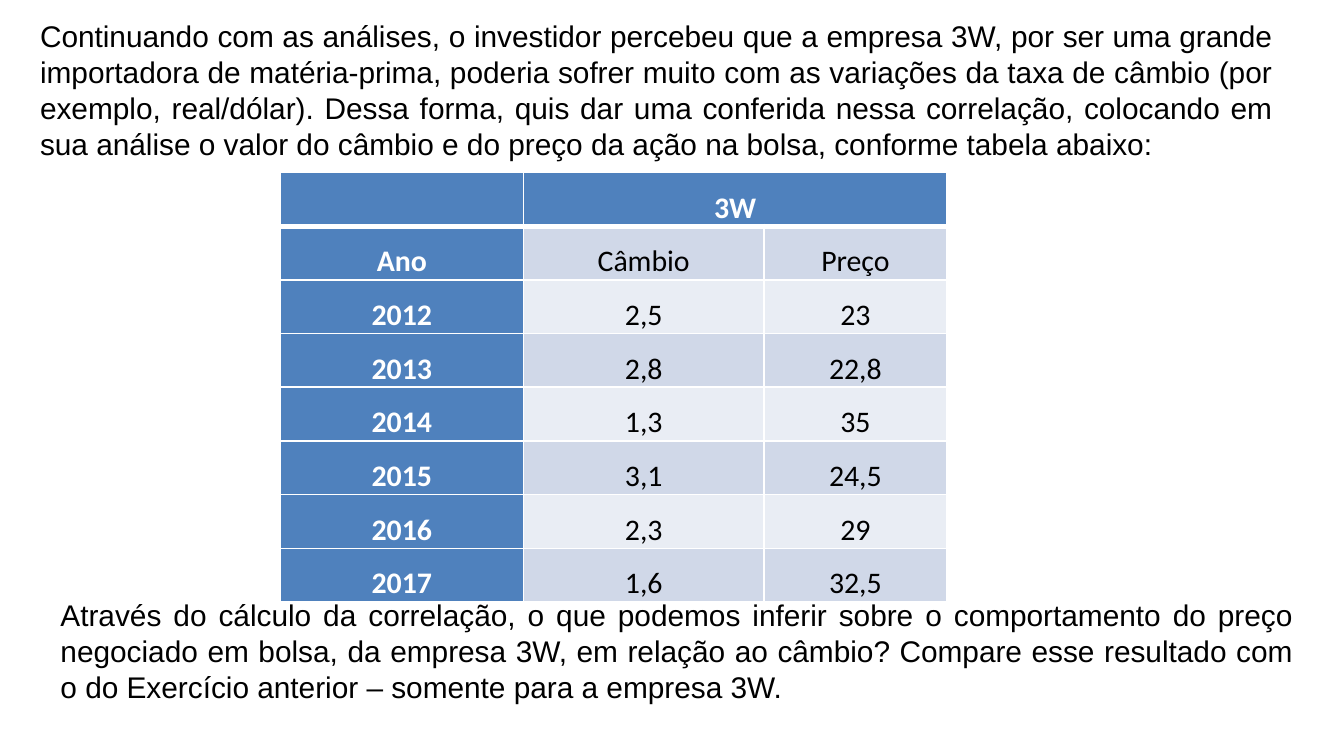
from dataclasses import dataclass
from lxml.etree import SubElement
from pptx import Presentation
from pptx.dml.color import RGBColor
from pptx.enum.text import MSO_ANCHOR, MSO_AUTO_SIZE, PP_ALIGN
from pptx.oxml.ns import qn
from pptx.slide import Slide
from pptx.util import Inches, Pt

SLIDE_WIDTH = Inches(10)
SLIDE_HEIGHT = SLIDE_WIDTH * 9 // 16

INTRODUCTION = (
    "Continuando com as análises, o investidor percebeu que a empresa 3W, por ser uma grande "
    "importadora de matéria-prima, poderia sofrer muito com as variações da taxa de câmbio "
    "(por exemplo, real/dólar). Dessa forma, quis dar uma conferida nessa correlação, colocando "
    "em sua análise o valor do câmbio e do preço da ação na bolsa, conforme tabela abaixo:"
)
QUESTION = (
    "Através do cálculo da correlação, o que podemos inferir sobre o comportamento do preço "
    "negociado em bolsa, da empresa 3W, em relação ao câmbio? Compare esse resultado com o do "
    "Exercício anterior – somente para a empresa 3W."
)
EXCHANGE_AND_PRICE = [
    ["", "3W", ""],
    ["Ano", "Câmbio", "Preço"],
    ["2012", "2,5", "23"],
    ["2013", "2,8", "22,8"],
    ["2014", "1,3", "35"],
    ["2015", "3,1", "24,5"],
    ["2016", "2,3", "29"],
    ["2017", "1,6", "32,5"],
]


def color(value):
    return RGBColor.from_string(value)


def percent(share, length):
    return round(length * share / 100)


@dataclass
class SlideBuilder:
    slide: Slide
    text_font: str = "Arial"
    table_font: str = "Calibri"
    size: int = 16
    dark: str = "000000"
    light: str = "FFFFFF"
    header: str = "4F81BD"
    bands: tuple = ("E9EDF4", "D0D8E8")

    def place(self, left, top, width, height):
        return (
            percent(left, SLIDE_WIDTH), percent(top, SLIDE_HEIGHT),
            percent(width, SLIDE_WIDTH), percent(height, SLIDE_HEIGHT),
        )

    def format(self, paragraph, font_name, font_color, alignment, bold=False):
        paragraph.alignment = alignment
        font = paragraph.font
        font.name, font.size, font.bold = font_name, Pt(self.size), bold
        font.color.rgb = color(font_color)

    def text(self, content, area, anchor=MSO_ANCHOR.TOP):
        frame = self.slide.shapes.add_textbox(*self.place(*area)).text_frame
        frame.word_wrap = True
        frame.auto_size = MSO_AUTO_SIZE.SHAPE_TO_FIT_TEXT
        frame.vertical_anchor = anchor
        frame.text = content
        self.format(frame.paragraphs[0], self.text_font, self.dark, PP_ALIGN.JUSTIFY)

    def borders(self, cell, top, bottom):
        properties = cell._tc.get_or_add_tcPr()
        for side, width in (("L", 1), ("R", 1), ("T", top), ("B", bottom)):
            line = SubElement(properties, qn(f"a:ln{side}"), w=str(Pt(width)))
            fill = SubElement(line, qn("a:solidFill"))
            SubElement(fill, qn("a:srgbClr"), val=self.light)

    def cell(self, cell, content, row, column):
        is_header = row == 0 or column == 0
        self.borders(cell, top=3 if row == 1 else 1, bottom=3 if row == 0 else 1)
        cell.fill.solid()
        cell.fill.fore_color.rgb = color(self.header if is_header else self.bands[row % 2])
        cell.margin_left = cell.margin_right = Inches(0.04)
        cell.margin_top = cell.margin_bottom = 0
        cell.vertical_anchor = MSO_ANCHOR.BOTTOM
        cell.text = content
        paragraph = cell.text_frame.paragraphs[0]
        paragraph.line_spacing = 1.47
        font_color = self.light if is_header else self.dark
        self.format(paragraph, self.table_font, font_color, PP_ALIGN.CENTER, is_header)

    def table(self, rows, area, column_shares):
        frame = self.slide.shapes.add_table(len(rows), len(rows[0]), *self.place(*area))
        table = frame.table
        for column, share in zip(table.columns, column_shares):
            column.width = percent(share, SLIDE_WIDTH)
        for row, values in enumerate(rows):
            for column, content in enumerate(values):
                self.cell(table.cell(row, column), content, row, column)
        table.cell(0, 1).merge(table.cell(0, 2))


def main():
    presentation = Presentation()
    presentation.slide_width, presentation.slide_height = SLIDE_WIDTH, SLIDE_HEIGHT
    blank_layout = presentation.slide_layouts[6]
    builder = SlideBuilder(presentation.slides.add_slide(blank_layout))

    column_shares = (18.1, 17.9, 13.6)
    builder.table(EXCHANGE_AND_PRICE, (20.85, 22.8, sum(column_shares), 55.3), column_shares)
    builder.text(INTRODUCTION, (2, 1.35, 93.7, 21), MSO_ANCHOR.MIDDLE)
    builder.text(QUESTION, (3.52, 78.1, 93.7, 16.2))
    presentation.save("out.pptx")


if __name__ == "__main__":
    main()
